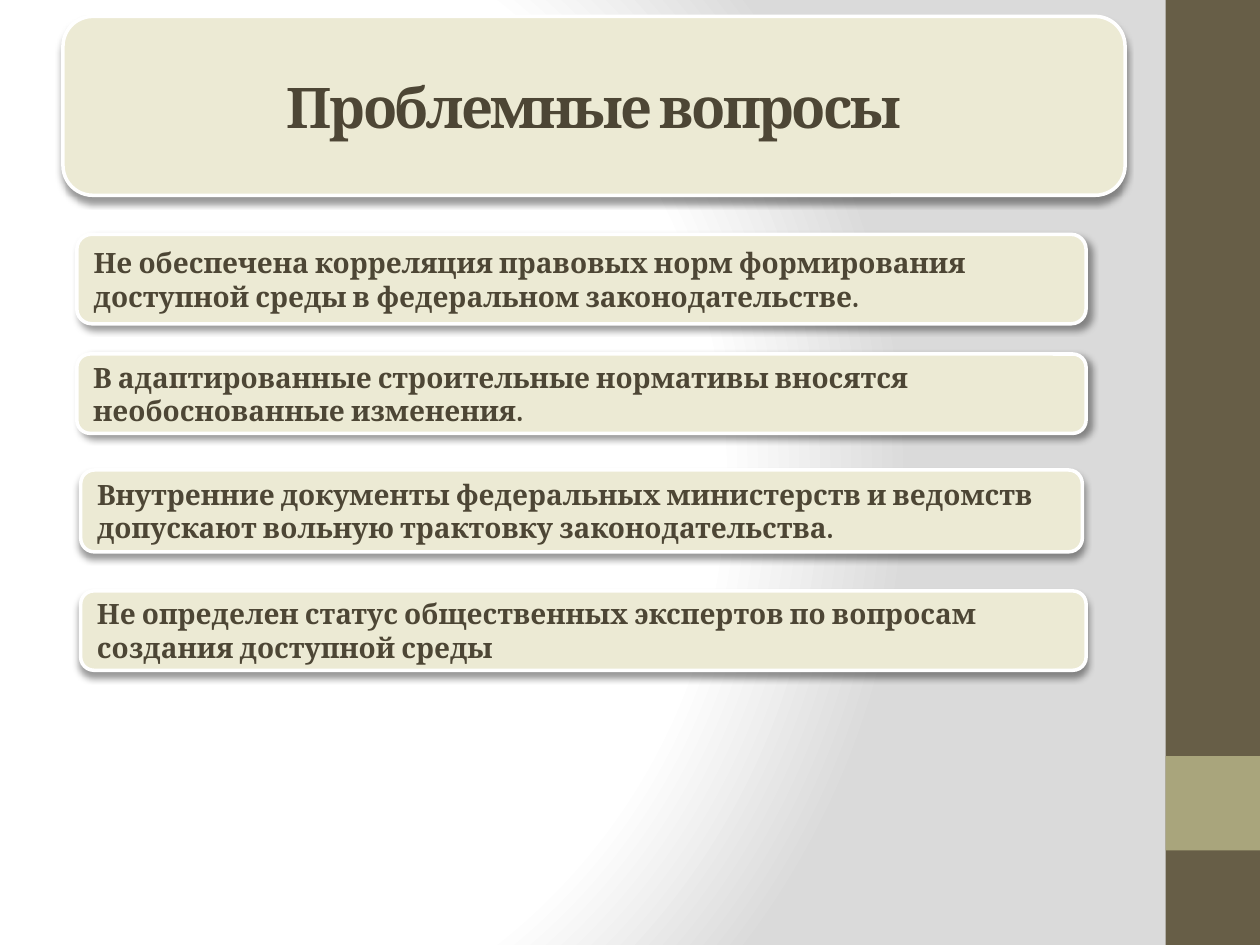
from lxml import etree
from pptx import Presentation, util as u
from pptx.dml.color import RGBColor
from pptx.enum import shapes, text
from pptx.oxml import parse_xml
from pptx.oxml.ns import nsdecls

WIDE, HIGH = 10, 7.5
HUES = {
    "bar": "675E47", "accent": "A9A57C", "card": "ECEAD4", "ink": "4D4635",
    "white": "FFFFFF", "grey": "DADADA", "shade": "000000",
}
CARDS = [
    (0.61, 1.86, 8.01, 0.71, 45,
     "Не обеспечена корреляция правовых норм формирования доступной среды "
     "в федеральном законодательстве."),
    (0.61, 2.81, 8.01, 0.63, 45,
     "В адаптированные строительные нормативы вносятся необоснованные изменения."),
    (0.64, 3.73, 7.95, 0.65, 90,
     "Внутренние документы федеральных министерств и ведомств "
     "допускают вольную трактовку законодательства."),
    (0.64, 4.69, 7.98, 0.63, 90,
     "Не определен статус общественных экспертов по вопросам создания доступной среды"),
]


def hue(name):
    """Return the named colour."""
    return RGBColor.from_string(HUES[name])


def paint(slide):
    """Give the slide its round gradient background."""
    stops = "".join(
        f'<a:gs pos="{pos * 1000}"><a:srgbClr val="{HUES[name]}"/></a:gs>'
        for pos, name in ((0, "white"), (75, "white"), (100, "grey")))
    back = parse_xml(
        f'<p:bg {nsdecls("p", "a")}><p:bgPr><a:gradFill rotWithShape="1">'
        f'<a:gsLst>{stops}</a:gsLst><a:path path="circle">'
        '<a:fillToRect l="20000" t="50000" r="100000" b="50000"/></a:path>'
        '</a:gradFill><a:effectLst/></p:bgPr></p:bg>')
    slide.element.cSld.insert(0, back)


def block(slide, kind, box, fill):
    """Add a filled shape without line or shadow."""
    shape = slide.shapes.add_shape(kind, *(u.Inches(n) for n in box))
    shape.shadow.inherit = False
    shape.fill.solid()
    shape.fill.fore_color.rgb = hue(fill)
    shape.line.fill.background()
    return shape


def shade(shape, angle):
    """Cast a soft shadow from the shape at the given angle."""
    effects = shape.element.spPr.find("{*}effectLst")
    effects.append(etree.fromstring(
        f'<a:outerShdw {nsdecls("a")} blurRad="{u.Pt(4)}" dist="{u.Pt(3)}" '
        f'dir="{angle * 60000}" rotWithShape="0"><a:srgbClr val="{HUES["shade"]}">'
        '<a:alpha val="40000"/></a:srgbClr></a:outerShdw>'))


def write(shape, words, size=16, align=text.PP_ALIGN.LEFT, track=None):
    """Set bold text in the middle of the shape."""
    frame = shape.text_frame
    frame.word_wrap = True
    frame.vertical_anchor = text.MSO_ANCHOR.MIDDLE
    para = frame.paragraphs[0]
    para.alignment = align
    run = para.add_run()
    run.text = words
    font = run.font
    font.name, font.size, font.bold = "Cambria", u.Pt(size), True
    font.color.rgb = hue("ink")
    if track is not None:
        run._r.get_or_add_rPr().set("spc", str(round(track * 100)))


def card(slide, box, angle, words, **style):
    """Add a rounded card with a white edge, a shadow and text."""
    shape = block(slide, shapes.MSO_SHAPE.ROUNDED_RECTANGLE, box, "card")
    shape.line.color.rgb = hue("white")
    shape.line.width = u.Pt(2)
    shade(shape, angle)
    write(shape, words, **style)


def main():
    """Build and save the slide."""
    deck = Presentation()
    deck.slide_width, deck.slide_height = u.Inches(WIDE), u.Inches(HIGH)
    slide = deck.slides.add_slide(deck.slide_layouts[6])
    paint(slide)
    side = HIGH / 10
    left = WIDE - side
    rect = shapes.MSO_SHAPE.RECTANGLE
    block(slide, rect, (left, 0, side, HIGH), "bar")
    block(slide, rect, (left, HIGH * 0.8, side, side), "accent")
    card(slide, (0.5, 0.13, 8.43, 1.42), 90, "Проблемные вопросы",
         size=32, align=text.PP_ALIGN.CENTER, track=-1.5)
    for *box, angle, words in CARDS:
        card(slide, box, angle, words)
    deck.save("out.pptx")


if __name__ == "__main__":
    main()
